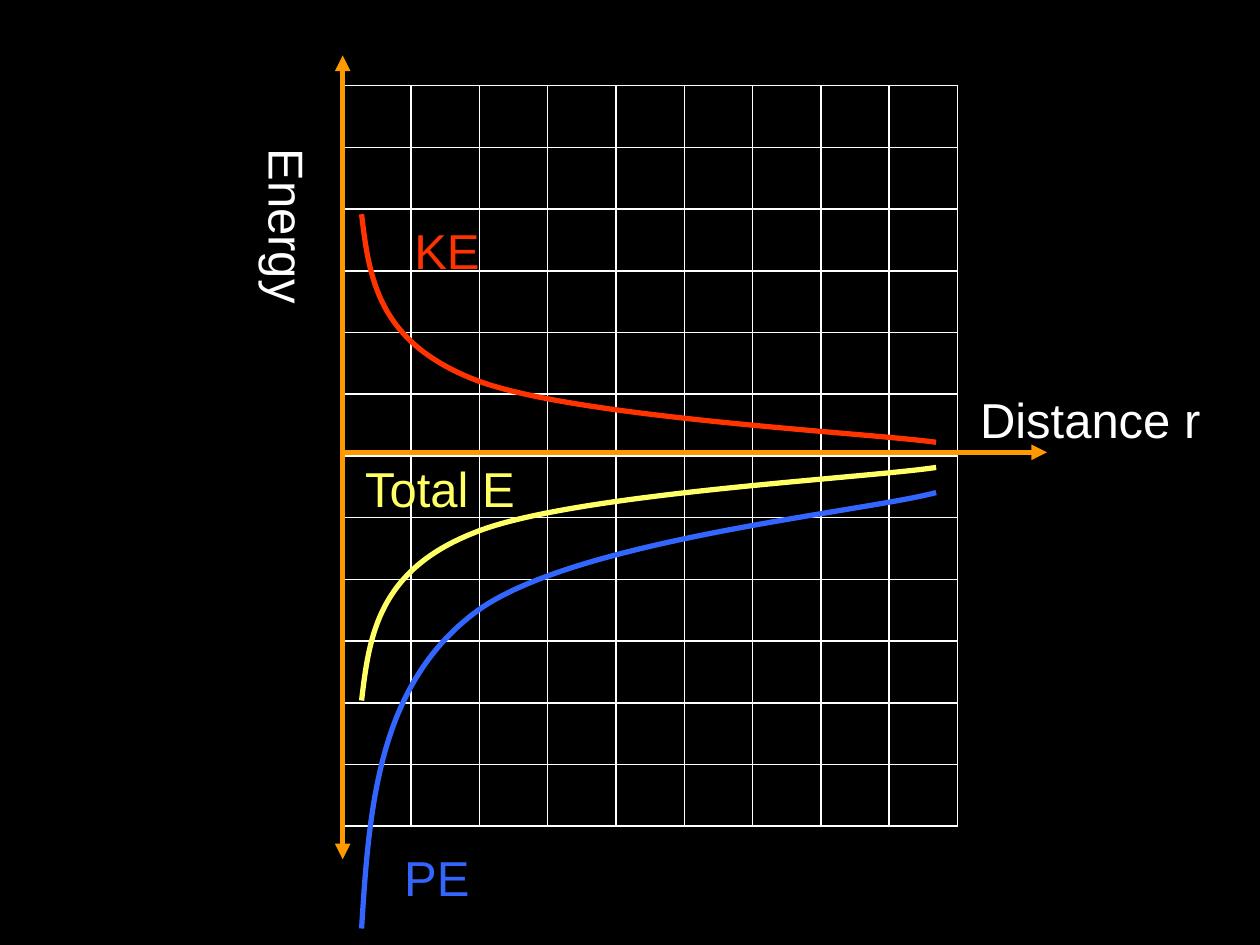
from lxml.etree import SubElement
from pptx import Presentation
from pptx.dml.color import RGBColor
from pptx.enum.shapes import MSO_CONNECTOR
from pptx.enum.text import MSO_AUTO_SIZE
from pptx.oxml import parse_xml
from pptx.oxml.ns import nsdecls, qn
from pptx.util import Inches, Pt

# Content
COLORS = {"back": "000000", "text": "FFFFFF", "axis": "FF9900",
          "KE": "FF3300", "PE": "3366FF", "Total E": "FFFF66"}
GRID = {"left": 2.72, "top": 0.68, "width": 4.88, "height": 5.88,
        "columns": 9, "rows": 12}
ZERO_ENERGY = 3.59
LABEL_HEIGHT = 0.57
# from, to, arrowheads
AXES = [((GRID["left"], 0.44), (GRID["left"], 6.82), ("headEnd", "tailEnd")),
        ((GRID["left"], ZERO_ENERGY), (8.31, ZERO_ENERGY), ("tailEnd",))]
# text, left, top, width, rotation
AXIS_LABELS = [("Energy", 1.46, 1.62, 1.65, 90),
               ("Distance r", 7.68, 3.04, 1.97, 0)]
# All curves share their x values: start, then two cubic Bezier segments
CURVE_X = (2.87, 2.93, 3.00, 3.76, 4.51, 6.82, 7.43)
# label, label position, y values of the curve
ENERGIES = [
    ("PE", (3.11, 6.68), (7.37, 6.41, 5.45, 4.87, 4.29, 4.07, 3.91)),
    ("KE", (3.19, 1.70), (1.70, 2.21, 2.71, 3.01, 3.31, 3.43, 3.51)),
    ("Total E", (2.80, 3.59), (5.56, 5.05, 4.53, 4.23, 3.92, 3.80, 3.71)),
]


def rgb(name):
    return RGBColor.from_string(COLORS[name])


def add_label(shapes, text, left, top, width, color, rotation=0):
    label = shapes.add_textbox(Inches(left), Inches(top),
                               Inches(width), Inches(LABEL_HEIGHT))
    label.rotation = rotation
    frame = label.text_frame
    frame.word_wrap = True
    frame.auto_size = MSO_AUTO_SIZE.SHAPE_TO_FIT_TEXT
    run = frame.paragraphs[0].add_run()
    run.text = text
    run.font.name, run.font.size = "Arial", Pt(28)
    run.font.color.rgb = rgb(color)


def add_curve(shapes, controls, color):
    start, *rest = [tuple(map(Inches, point)) for point in controls]
    builder = shapes.build_freeform(*start, scale=1.0)
    builder.add_line_segments(rest, close=False)
    curve = builder.convert_to_shape()
    # Merge each three line segments into one cubic Bezier segment
    outline = curve._element.find(".//" + qn("a:pathLst"))[0]
    segments = outline.findall(qn("a:lnTo"))
    for first in range(0, len(segments), 3):
        cubic = SubElement(outline, qn("a:cubicBezTo"))
        for segment in segments[first:first + 3]:
            cubic.append(segment[0])
            outline.remove(segment)
    curve.shadow.inherit = False
    curve.fill.background()
    curve.line.color.rgb = rgb(color)
    curve.line.width = Pt(3)


def add_axis(shapes, start, end, arrowheads):
    axis = shapes.add_connector(MSO_CONNECTOR.STRAIGHT,
                                *map(Inches, start + end))
    axis.line.color.rgb = rgb("axis")
    axis.line.width = Pt(3)
    line = axis._element.spPr.find(qn("a:ln"))
    for arrowhead in arrowheads:
        SubElement(line, qn(f"a:{arrowhead}"), type="triangle")
    SubElement(axis._element.spPr, qn("a:effectLst"))


def add_grid(shapes):
    frame = shapes.add_table(
        GRID["rows"], GRID["columns"],
        *(Inches(GRID[side]) for side in ("left", "top", "width", "height")))
    grid = frame.table
    grid.first_row = grid.horz_banding = False
    for cell in grid.iter_cells():
        borders = cell._tc.get_or_add_tcPr()
        for side in "LRTB":
            borders.append(parse_xml(
                f'<a:ln{side} {nsdecls("a")} w="{Pt(1)}"><a:solidFill>'
                f'<a:srgbClr val="{COLORS["text"]}"/></a:solidFill></a:ln{side}>'))
        cell.fill.background()


def main():
    deck = Presentation()
    deck.slide_width, deck.slide_height = Inches(10), Inches(7.5)
    slide = deck.slides.add_slide(deck.slide_layouts[6])
    slide.background.fill.solid()
    slide.background.fill.fore_color.rgb = rgb("back")

    # Grid and axes
    add_grid(slide.shapes)
    for axis in AXES:
        add_axis(slide.shapes, *axis)
    for text, left, top, width, rotation in AXIS_LABELS:
        add_label(slide.shapes, text, left, top, width, "text", rotation)

    # Each energy curve grouped with its label
    for energy, position, curve_y in ENERGIES:
        members = slide.shapes.add_group_shape().shapes
        add_curve(members, list(zip(CURVE_X, curve_y)), energy)
        add_label(members, energy, *position, 1.89, energy)

    deck.save("out.pptx")


if __name__ == "__main__":
    main()
